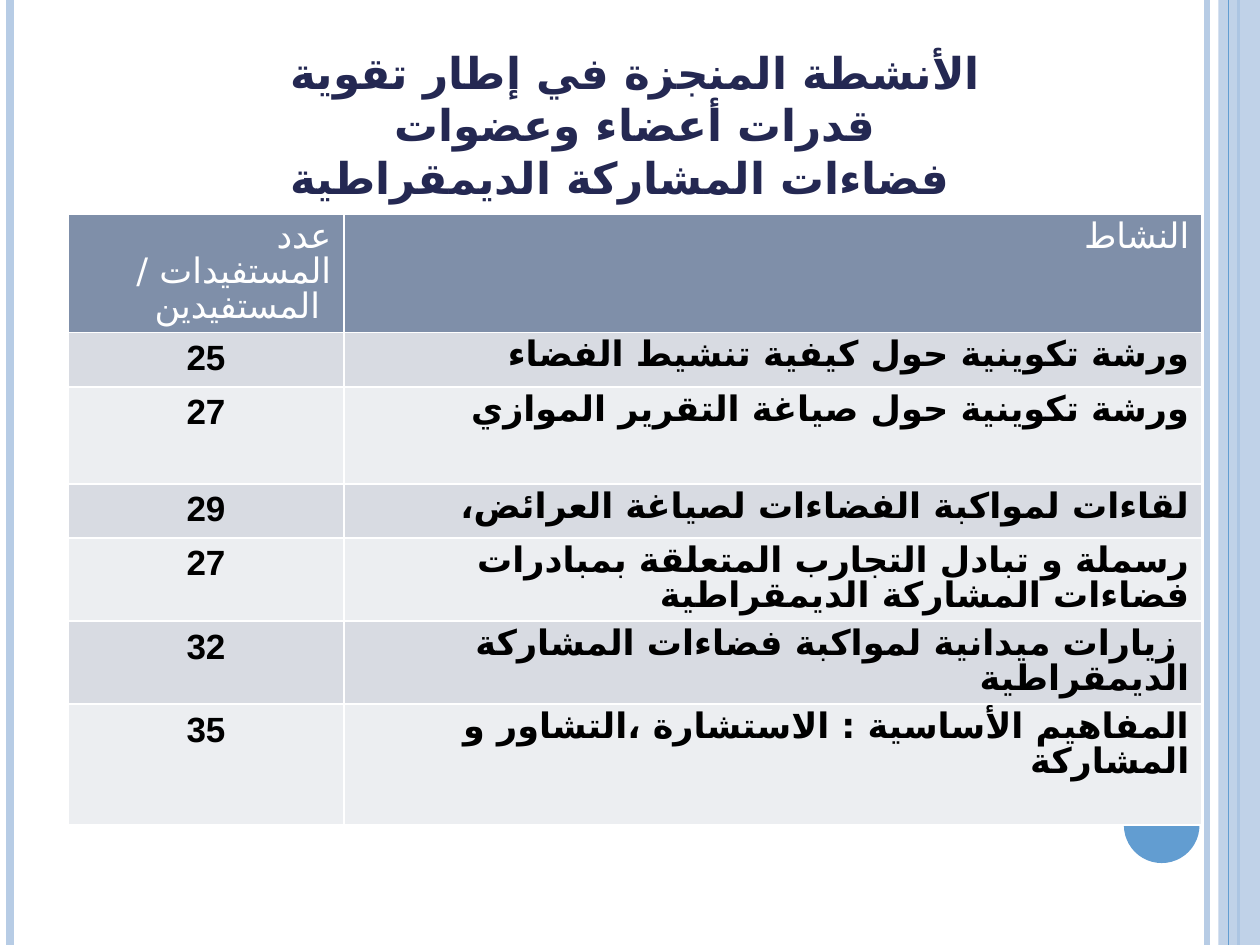
from lxml.etree import SubElement
from pptx import Presentation
from pptx.dml.color import RGBColor
from pptx.enum.shapes import MSO_CONNECTOR as Connector, MSO_SHAPE as Shape
from pptx.enum.text import MSO_ANCHOR as Anchor, PP_ALIGN as Align
from pptx.oxml.ns import qn
from pptx.util import Inches, Pt

WHITE = RGBColor(0xFF, 0xFF, 0xFF)
BLACK = RGBColor(0, 0, 0)
NAVY = RGBColor(0x24, 0x28, 0x52)
PALE_BLUE = RGBColor(0xB7, 0xCC, 0xE5)
BLUE = RGBColor(0x62, 0x9D, 0xD1)
SLATE = RGBColor(0x7F, 0x8F, 0xA9)
BANDS = RGBColor(0xEC, 0xEE, 0xF1), RGBColor(0xD8, 0xDB, 0xE2)
FONT = "Arial"
ARABIC_FONT = "DejaVu Sans"

TITLE = [
    ("الأنشطة المنجزة في إطار تقوية قدرات أعضاء وعضوات", False),
    ("  فضاءات المشاركة الديمقراطية", True),
]
HEADER = ("عدد المستفيدات / المستفيدين ", "النشاط", True)
ACTIVITIES = [
    ("25", "ورشة تكوينية حول كيفية تنشيط الفضاء", True),
    ("27", "ورشة تكوينية حول صياغة التقرير الموازي", True),
    ("29", "لقاءات لمواكبة الفضاءات لصياغة العرائض، ", True),
    ("27", "رسملة و تبادل التجارب المتعلقة بمبادرات فضاءات المشاركة الديمقراطية", False),
    ("32", " زيارات ميدانية لمواكبة فضاءات المشاركة الديمقراطية", True),
    ("35", "المفاهيم الأساسية : الاستشارة ،التشاور و المشاركة", True),
]
COLUMN_WIDTHS = [2.19, 6.81]
ROW_HEIGHTS = [0.94, 0.43, 0.77, 0.43, 0.66, 0.66, 0.96]
ARABIC_SPACING = 0.86
RULES_BEHIND = [(9.58, PALE_BLUE, 3), (0.08, PALE_BLUE, 4.5), (9.83, BLUE, 1.5)]
RULES_FRONT = [(9.75, BLUE, 0.75)]


def add_rules(slide, rules, height):
    for x, color, weight in rules:
        rule = slide.shapes.add_connector(
            Connector.STRAIGHT, Inches(x), 0, Inches(x), height)
        rule.line.color.rgb = color
        rule.line.width = Pt(weight)
        SubElement(rule._element.spPr, qn("a:effectLst"))


def add_plain(slide, preset, box, color):
    plain = slide.shapes.add_shape(preset, *map(Inches, box))
    plain.shadow.inherit = False
    plain.fill.solid()
    plain.fill.fore_color.rgb = color
    plain.line.fill.background()
    return plain


def style(paragraph, size, color, bold, align, rtl):
    paragraph.alignment = align
    for run in paragraph.runs:
        font = run.font
        font.name, font.size, font.bold = FONT, Pt(size), bold
        font.color.rgb = color
        SubElement(run._r.get_or_add_rPr(), qn("a:cs"), typeface=ARABIC_FONT)
    if rtl:
        paragraph._p.get_or_add_pPr().set("rtl", "1")


def fill_cell(cell, text, fill, color, bold, align, rtl):
    cell.text = text
    paragraph = cell.text_frame.paragraphs[0]
    style(paragraph, 20, color, bold, align, rtl)
    if align == Align.RIGHT:
        paragraph.line_spacing = ARABIC_SPACING
    properties = cell._tc.get_or_add_tcPr()
    for side in "LRTB":
        border = SubElement(properties, qn("a:ln" + side), w=str(Pt(1)))
        SubElement(SubElement(border, qn("a:solidFill")),
                   qn("a:srgbClr"), val=str(WHITE))
    cell.fill.solid()
    cell.fill.fore_color.rgb = fill


def add_activities(slide):
    table = slide.shapes.add_table(
        len(ROW_HEIGHTS), len(COLUMN_WIDTHS), Inches(0.54), Inches(1.7),
        Inches(sum(COLUMN_WIDTHS)), Inches(sum(ROW_HEIGHTS))).table
    for column, width in zip(table.columns, COLUMN_WIDTHS):
        column.width = Inches(width)
    for row, height in zip(table.rows, ROW_HEIGHTS):
        row.height = Inches(height)
    for r, (count, activity, rtl) in enumerate([HEADER] + ACTIVITIES):
        head = r == 0
        fill = SLATE if head else BANDS[r % 2]
        color = WHITE if head else BLACK
        count_align = Align.RIGHT if head else Align.CENTER
        fill_cell(table.cell(r, 0), count, fill, color, not head,
                  count_align, False)
        fill_cell(table.cell(r, 1), activity, fill, color, not head,
                  Align.RIGHT, rtl)


def set_title(title):
    title.left, title.top = Inches(1.75), Inches(0.31)
    title.width, title.height = Inches(6.58), Inches(0.94)
    frame = title.text_frame
    frame.word_wrap = True
    frame.vertical_anchor = Anchor.TOP
    frame.margin_left = frame.margin_right = Inches(0.5)
    frame.text = "\n".join(text for text, _ in TITLE)
    for paragraph, (_, rtl) in zip(frame.paragraphs, TITLE):
        style(paragraph, 25, NAVY, True, Align.CENTER, rtl)
        paragraph.space_before = Pt(0)


def main():
    deck = Presentation()
    deck.slide_width, deck.slide_height = Inches(10), Inches(7.5)
    slide = deck.slides.add_slide(deck.slide_layouts[5])
    set_title(slide.shapes.title)
    add_rules(slide, RULES_BEHIND, deck.slide_height)
    band = add_plain(slide, Shape.RECTANGLE, (9.67, 0, 0.33, 7.5), PALE_BLUE)
    band_color = band._element.spPr.find(qn("a:solidFill"))[0]
    SubElement(band_color, qn("a:alpha"), val="87000")
    add_rules(slide, RULES_FRONT, deck.slide_height)
    add_plain(slide, Shape.OVAL, (8.92, 6.25, 0.6, 0.6), BLUE)
    add_activities(slide)
    deck.save("out.pptx")


if __name__ == "__main__":
    main()
